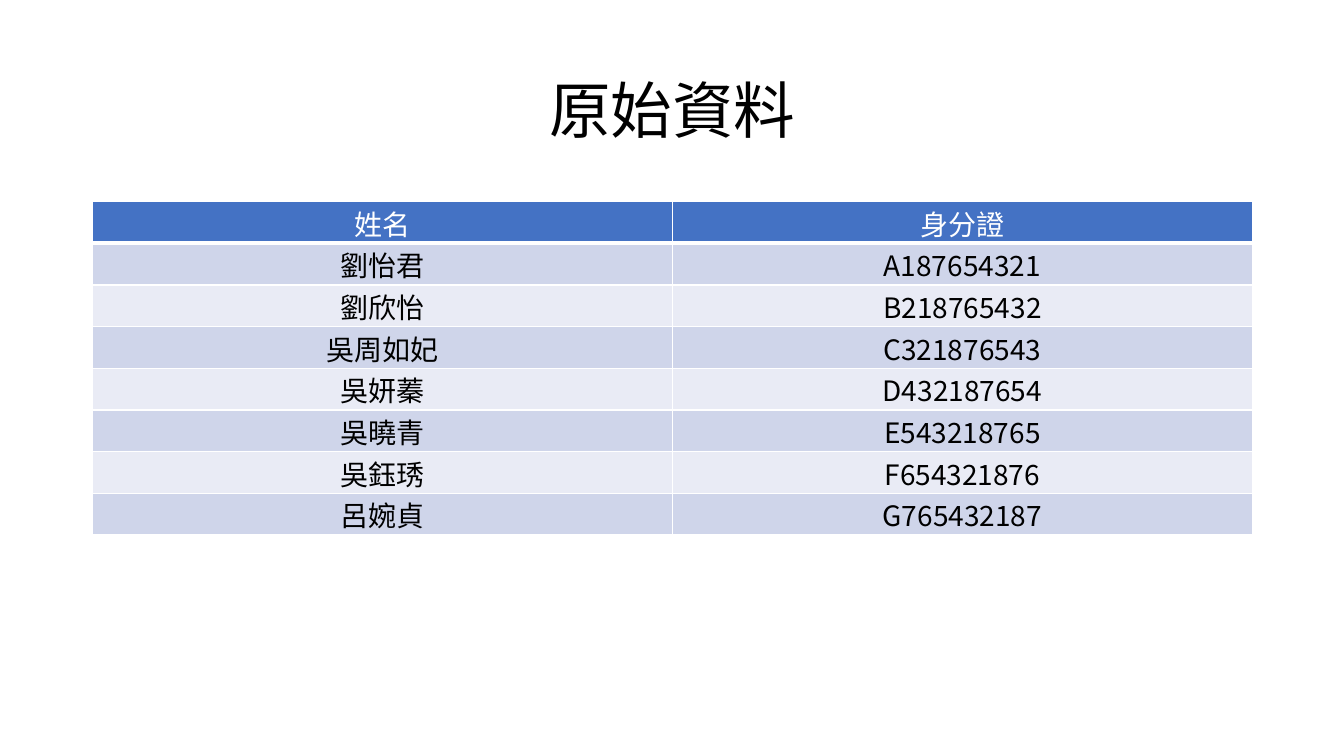
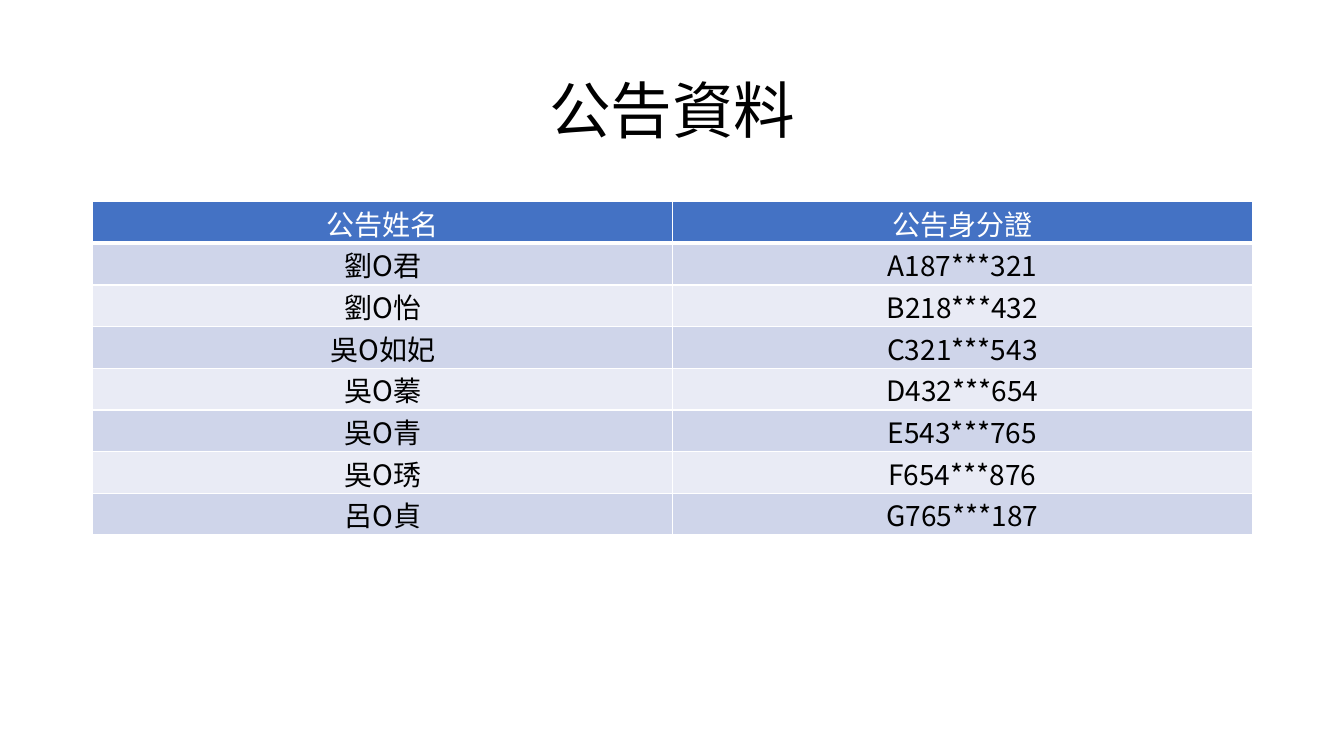
from lxml.etree import SubElement
from pptx import Presentation
from pptx.dml.color import RGBColor
from pptx.enum.text import MSO_ANCHOR, PP_ALIGN
from pptx.oxml import parse_xml
from pptx.oxml.ns import nsdecls, qn
from pptx.util import Inches, Pt

FONT = "Noto Sans CJK SC"
BLACK = RGBColor(0x00, 0x00, 0x00)
WHITE = RGBColor(0xFF, 0xFF, 0xFF)
HEADER = RGBColor(0x44, 0x72, 0xC4)
BANDS = (RGBColor(0xCF, 0xD5, 0xEA), RGBColor(0xE9, 0xEB, 0xF5))

MARGIN = 0.92
CONTENT_WIDTH = 11.5
ROW_HEIGHT = 0.41

PEOPLE = [
    ("劉怡君", "A187654321"),
    ("劉欣怡", "B218765432"),
    ("吳周如妃", "C321876543"),
    ("吳妍蓁", "D432187654"),
    ("吳曉青", "E543218765"),
    ("吳鈺琇", "F654321876"),
    ("呂婉貞", "G765432187"),
]


def mask(name, number):
    """Hide the second character of a name and the middle three digits of an ID."""
    return f"{name[0]}O{name[2:]}", f"{number[:4]}***{number[-3:]}"


def write(tf, text, size=20, color=BLACK, line_spacing=None):
    p = tf.paragraphs[0]
    p.alignment = PP_ALIGN.CENTER
    p.line_spacing = line_spacing
    r = p.add_run()
    r.text = text
    r.font.size = Pt(size)
    r.font.bold = False
    r.font.name = FONT
    r.font.color.rgb = color
    SubElement(r.font._element, qn("a:ea"), typeface=FONT)


def set_borders(cell, top=1, bottom=1):
    """Draw white borders; they must come before the fill in the cell's XML."""
    widths = {"lnL": 1, "lnR": 1, "lnT": top, "lnB": bottom}
    tc_pr = cell._tc.get_or_add_tcPr()
    for i, (tag, width) in enumerate(widths.items()):
        tc_pr.insert(i, parse_xml(
            f'<a:{tag} {nsdecls("a")} w="{Pt(width)}"><a:solidFill>'
            f'<a:srgbClr val="{WHITE}"/></a:solidFill></a:{tag}>'))


class Deck:
    def __init__(self):
        self.prs = Presentation()
        self.prs.slide_width = Inches(13.33)
        self.prs.slide_height = Inches(7.5)
        self.s = None

    def new_slide(self, title):
        self.s = self.prs.slides.add_slide(self.prs.slide_layouts[5])
        sp = self.s.shapes.title
        sp.left, sp.top = Inches(MARGIN), Inches(0.4)
        sp.width, sp.height = Inches(CONTENT_WIDTH), Inches(1.45)
        sp.text_frame.vertical_anchor = MSO_ANCHOR.MIDDLE
        write(sp.text_frame, title, size=44, line_spacing=0.9)

    def table(self, rows, anchor):
        table = self.s.shapes.add_table(
            len(rows), len(rows[0]), Inches(MARGIN), Inches(2),
            Inches(CONTENT_WIDTH), Inches(ROW_HEIGHT * len(rows))).table
        for i, row in enumerate(rows):
            for j, text in enumerate(row):
                self.cell(table.cell(i, j), i, text, anchor)

    def cell(self, cell, row, text, anchor):
        is_header = row == 0
        cell.margin_left = cell.margin_right = cell.margin_top = Inches(0.01)
        cell.margin_bottom = 0
        cell.vertical_anchor = anchor
        cell.fill.solid()
        cell.fill.fore_color.rgb = HEADER if is_header else BANDS[(row - 1) % 2]
        set_borders(cell, top=3 if row == 1 else 1, bottom=3 if is_header else 1)
        write(cell.text_frame, text, color=WHITE if is_header else BLACK)


def main():
    deck = Deck()
    deck.new_slide("原始資料")
    deck.table([("姓名", "身分證"), *PEOPLE], MSO_ANCHOR.MIDDLE)
    deck.new_slide("公告資料")
    deck.table([("公告姓名", "公告身分證"), *(mask(*person) for person in PEOPLE)],
               MSO_ANCHOR.BOTTOM)
    deck.prs.save("out.pptx")


if __name__ == "__main__":
    main()
